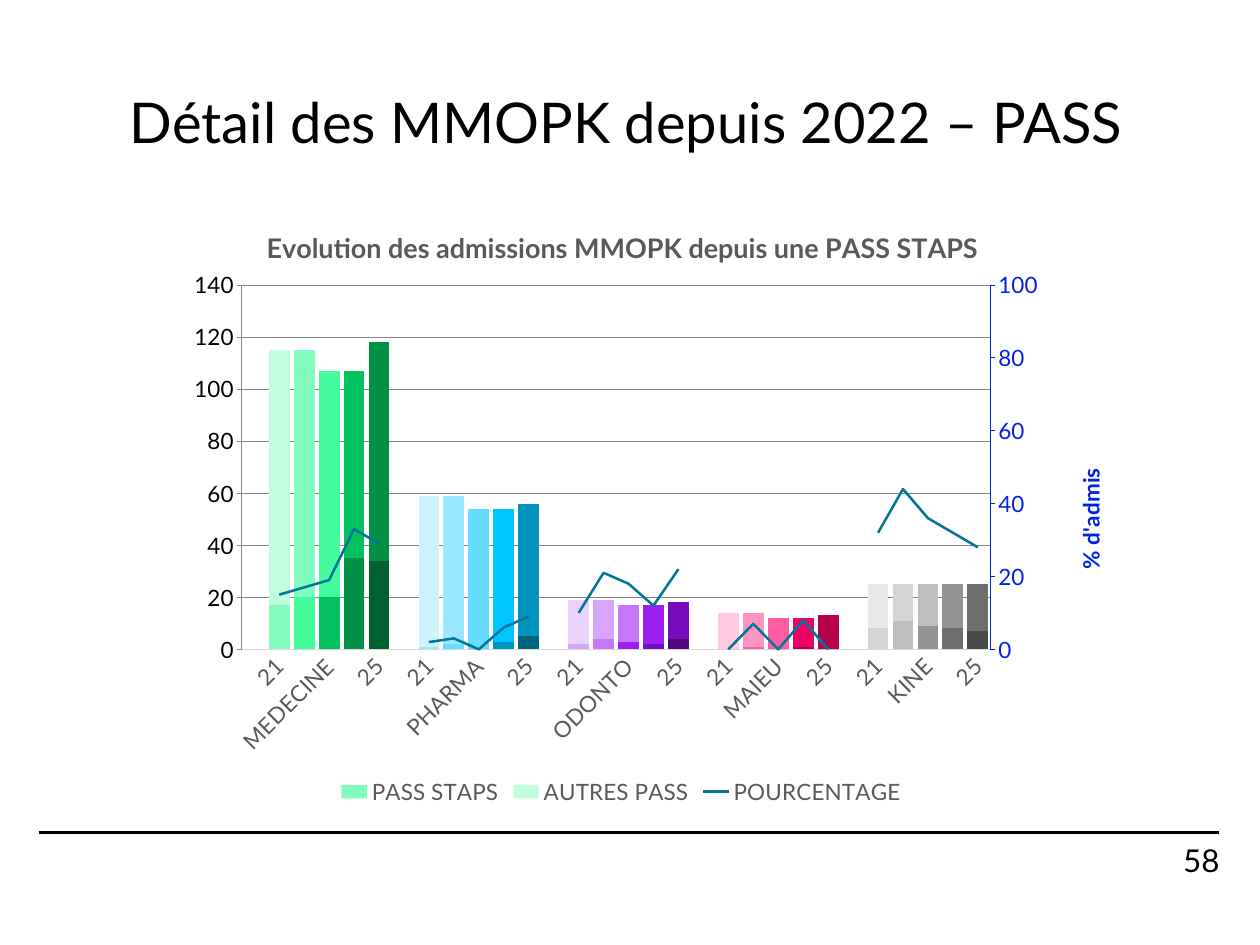
import copy
import pptx
import pptx.chart.axis
import pptx.chart.data
import pptx.dml.color
import pptx.enum.chart
import pptx.enum.shapes
import pptx.enum.text
import pptx.oxml
import pptx.oxml.ns
import pptx.util
from lxml import etree

Inches, Pt = pptx.util.Inches, pptx.util.Pt
qn = pptx.oxml.ns.qn
ALIGN = pptx.enum.text.PP_ALIGN
TICK = pptx.enum.chart.XL_TICK_MARK


class Theme:
    face = "Lato"
    black, gray, grid = "000000", "595959", "D9D9D9"
    blue, teal = "0022E6", "007799"
    head, page, title, label = 50, 28, 24, 20


# Subject: six shades from light to dark, admitted STAPS, other PASS, percent
SUBJECTS = {
    "MEDECINE": ("C1FEDE 83FDBE 45FC9D 03C15E 029147 01602F",
                 (17, 20, 20, 35, 34), (98, 95, 87, 72, 84),
                 (15, 17, 19, 33, 29)),
    "PHARMA": ("CCF4FF 99E8FF 66DDFF 00C6FF 0094BF 006380",
               (1, 2, 0, 3, 5), (58, 57, 54, 51, 51),
               (2, 3, 0, 6, 9)),
    "ODONTO": ("EBD2FC D7A5F9 C478F7 9C1EF1 770CBF 4F0880",
               (2, 4, 3, 2, 4), (17, 15, 14, 15, 14),
               (10, 21, 18, 12, 22)),
    "MAIEU": ("FFC9E0 FF94C1 FF5EA2 F20066 B5004C 790033",
              (0, 1, 0, 1, 0), (14, 13, 12, 11, 13),
              (0, 7, 0, 8, 0)),
    "KINE": ("E9E9E9 D3D4D4 BEBEBE 929393 6D6E6E 494A4A",
             (8, 11, 9, 8, 7), (17, 14, 16, 17, 18),
             (32, 44, 36, 32, 28)),
}
YEARS = 5
STEP = YEARS + 1


def rgb(code):
    return pptx.dml.color.RGBColor.from_string(code)


def style(font, size, color, bold=False):
    font.name, font.size, font.bold = Theme.face, Pt(size), bold
    font.color.rgb = rgb(color)


def stroke(line, color, width):
    line.color.rgb = rgb(color)
    line.width = Pt(width)


def add_text(slide, text, box, size, align, inset):
    frame = slide.shapes.add_textbox(*map(Inches, box)).text_frame
    frame.word_wrap = True
    frame.vertical_anchor = pptx.enum.text.MSO_ANCHOR.MIDDLE
    frame.margin_left = frame.margin_right = Inches(inset)
    frame.margin_top = frame.margin_bottom = Inches(inset / 2)
    para = frame.paragraphs[0]
    para.text, para.alignment, para.line_spacing = text, align, 0.9
    style(para.font, size, Theme.black)


def add_rule(slide, left, right, y):
    rule = slide.shapes.add_connector(
        pptx.enum.shapes.MSO_CONNECTOR.STRAIGHT,
        Inches(left), Inches(y), Inches(right), Inches(y))
    stroke(rule.line, Theme.black, 2)
    etree.SubElement(rule.element.spPr, qn("a:effectLst"))


def place(node, **spots):
    """Give a chart part a fixed place, in fractions of the chart."""
    layout = node.find(qn("c:layout"))
    if layout is None:
        layout = etree.Element(qn("c:layout"))
        node.insert(0, layout)
    manual = etree.SubElement(layout, qn("c:manualLayout"))
    if "w" in spots:
        etree.SubElement(manual, qn("c:layoutTarget")).set("val", "inner")
    modes = {"xMode": "edge", "yMode": "edge"}
    for tag, val in {**modes, **spots}.items():
        etree.SubElement(manual, qn("c:" + tag)).set("val", str(val))


def name_axis(axis, text, color, x, y):
    frame = axis.axis_title.text_frame
    frame.text = text
    style(frame.paragraphs[0].font, Theme.label, color, True)
    node = axis.axis_title.element
    node.find(".//" + qn("a:bodyPr")).set("rot", "-5400000")
    place(node, x=x, y=y)


def format_scale(axis, top, color, edge):
    axis.minimum_scale, axis.maximum_scale, axis.major_unit = 0, top, 20
    axis.major_tick_mark, axis.minor_tick_mark = TICK.OUTSIDE, TICK.NONE
    style(axis.tick_labels.font, Theme.label, color)
    stroke(axis.format.line, edge, 0.75)


def chart_data():
    data = pptx.chart.data.CategoryChartData()
    for name in SUBJECTS:
        for label in ("", "21", "", name, "", "25"):
            data.add_category(label)
    for year in range(YEARS):
        for part, name in ((1, "PASS STAPS"), (2, "AUTRES PASS")):
            vals = [None] * (STEP * len(SUBJECTS))
            vals[year + 1::STEP] = [row[part][year] for row in SUBJECTS.values()]
            data.add_series(f"Series {2 * year + part}" if year else name, vals)
    rates = [val for row in SUBJECTS.values() for val in (None, *row[3])]
    data.add_series("POURCENTAGE", rates)
    return data


def paint_bars(plot):
    plot.gap_width, plot.overlap = 20, 100
    ramps = [row[0].split() for row in SUBJECTS.values()]
    for num, bar in enumerate(plot.series):
        year, light = divmod(num, 2)
        shade = year + 1 - light
        bar.format.fill.solid()
        bar.format.fill.fore_color.rgb = rgb(ramps[0][shade])
        for group, ramp in enumerate(ramps):
            fill = bar.points[group * STEP + year + 1].format.fill
            fill.solid()
            fill.fore_color.rgb = rgb(ramp[shade])


def split_line(chart):
    """Move the last series to a line on a second axis, which is returned."""
    area = chart.element.find(".//" + qn("c:plotArea"))
    bars = area.find(qn("c:barChart"))
    rate = bars.findall(qn("c:ser"))[-1]
    flag = rate.find(qn("c:invertIfNegative"))
    if flag is not None:
        rate.remove(flag)
    line = pptx.oxml.parse_xml(
        f'<c:lineChart {pptx.oxml.ns.nsdecls("c")}>'
        '<c:grouping val="standard"/><c:varyColors val="0"/>'
        '<c:marker val="1"/><c:axId val="50"/><c:axId val="60"/>'
        '</c:lineChart>')
    line.insert(2, rate)
    bars.addnext(line)
    pairs = (("c:catAx", "50", "60"), ("c:valAx", "60", "50"))
    cat, val = [copy.deepcopy(area.find(qn(tag))) for tag, _, _ in pairs]
    last = area.find(qn("c:valAx"))
    for axis, (_, own, other) in zip((cat, val), pairs):
        axis.find(qn("c:axId")).set("val", own)
        axis.find(qn("c:crossAx")).set("val", other)
        last.addnext(axis)
        last = axis
    val.find(qn("c:axPos")).set("val", "r")
    val.find(qn("c:crosses")).set("val", "max")
    pptx.chart.axis.CategoryAxis(cat).visible = False
    return pptx.chart.axis.ValueAxis(val)


def format_base(chart):
    axis = chart.category_axis
    axis.major_tick_mark = axis.minor_tick_mark = TICK.NONE
    style(axis.tick_labels.font, Theme.label, Theme.gray)
    stroke(axis.format.line, Theme.grid, 0.75)
    node = chart.element.find(".//" + qn("c:catAx"))
    node.find(qn("c:txPr")).find(qn("a:bodyPr")).set("rot", "-2700000")
    skip = etree.Element(qn("c:tickLblSkip"))
    skip.set("val", "1")
    node.find(qn("c:noMultiLvlLbl")).addprevious(skip)


def add_legend(chart):
    chart.has_legend = True
    legend = chart.legend
    legend.position = pptx.enum.chart.XL_LEGEND_POSITION.BOTTOM
    legend.include_in_layout = False
    style(legend.font, Theme.label, Theme.gray)
    node = chart.element.find(".//" + qn("c:legend"))
    for num in range(2 * YEARS - 1, 1, -1):
        entry = etree.Element(qn("c:legendEntry"))
        etree.SubElement(entry, qn("c:idx")).set("val", str(num))
        etree.SubElement(entry, qn("c:delete")).set("val", "1")
        node.find(qn("c:legendPos")).addnext(entry)


def add_chart(slide, box):
    chart = slide.shapes.add_chart(
        pptx.enum.chart.XL_CHART_TYPE.COLUMN_STACKED,
        *map(Inches, box), chart_data()).chart
    style(chart.font, Theme.label, Theme.black)
    right, left = split_line(chart), chart.value_axis
    bars, lines = chart.plots
    bars.vary_by_categories = False
    paint_bars(bars)
    rate = lines.series[0]
    rate.smooth = False
    rate.marker.style = pptx.enum.chart.XL_MARKER_STYLE.NONE
    stroke(rate.format.line, Theme.teal, 2.25)

    format_base(chart)
    format_scale(left, 140, Theme.gray, Theme.black)
    stroke(left.major_gridlines.format.line, Theme.grid, 0.75)
    name_axis(left, "Nombre d'admis en MMOPK", Theme.gray, 0.03, 0.28)
    format_scale(right, 100, Theme.blue, Theme.blue)
    right.has_major_gridlines = False
    name_axis(right, "% d'admis", Theme.blue, 0.95, 0.44)

    frame = chart.chart_title.text_frame
    frame.text = "Evolution des admissions MMOPK depuis une PASS STAPS"
    style(frame.paragraphs[0].font, Theme.title, Theme.gray, True)
    place(chart.chart_title.element, x=0.14, y=0.05)
    place(chart.element.find(".//" + qn("c:plotArea")),
          x=0.12, y=0.15, w=0.75, h=0.59)
    add_legend(chart)


def main():
    deck = pptx.Presentation()
    deck.slide_width, deck.slide_height = Inches(15.59), Inches(11.69)
    slide = deck.slides.add_slide(deck.slide_layouts[6])
    add_rule(slide, 0.48, 15.08, 10.3)
    add_text(slide, "58", (12.8, 10.43, 2.29, 0.47), Theme.page, ALIGN.RIGHT, 0)
    add_text(slide, "Détail des MMOPK depuis 2022 – PASS",
             (1.51, 0.57, 13.73, 1.95), Theme.head, ALIGN.LEFT, 0.1)
    add_chart(slide, (1.51, 2.38, 12.35, 7.64))
    deck.save("out.pptx")


if __name__ == "__main__":
    main()
